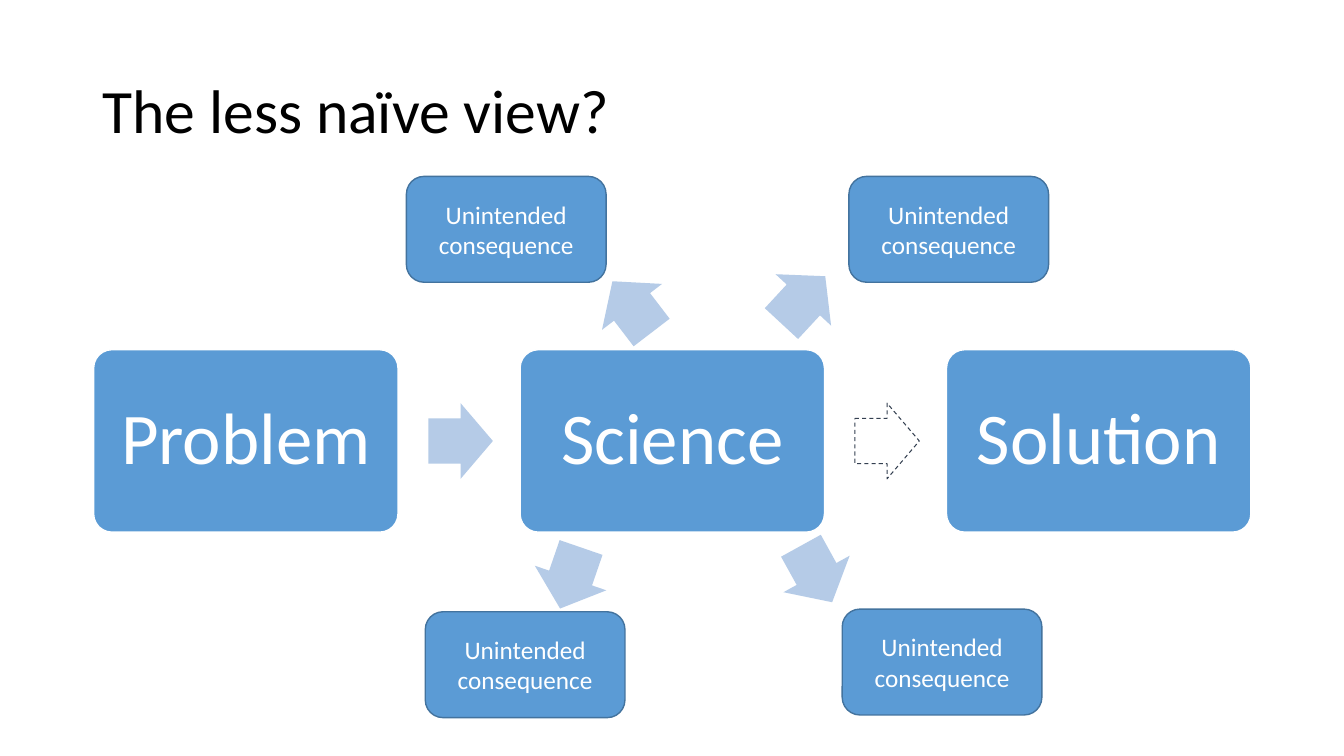
"""Build a slide on science and its unintended consequences."""
import pptx
import pptx.util
import pptx.dml.color
import pptx.enum.dml
import pptx.enum.shapes
import pptx.enum.text

Pt = pptx.util.Pt
RGB = pptx.dml.color.RGBColor.from_string
SHAPE = pptx.enum.shapes.MSO_SHAPE
ALIGN = pptx.enum.text.PP_ALIGN
COLORS = {"box": "5B9BD5", "edge": "43739E", "arrow": "B5CBE7",
          "dash": "333F50", "white": "FFFFFF", "black": "000000"}


def add_shape(s, kind, box, fill, line=None, width=1):
    sp = s.shapes.add_shape(kind, *[Pt(v) for v in box])
    sp.shadow.inherit = False
    sp.fill.solid()
    sp.fill.fore_color.rgb = RGB(COLORS[fill])
    if line:
        sp.line.color.rgb = RGB(COLORS[line])
        sp.line.width = Pt(width)
    else:
        sp.line.fill.background()
    return sp


def set_text(sp, text, size, color, inset, para):
    tf = sp.text_frame
    tf.text = text
    frame = {"word_wrap": True, "auto_size": pptx.enum.text.MSO_AUTO_SIZE.NONE,
             "vertical_anchor": pptx.enum.text.MSO_ANCHOR.MIDDLE,
             "margin_left": Pt(inset), "margin_right": Pt(inset),
             "margin_top": Pt(3.6), "margin_bottom": Pt(3.6)}
    for name, value in frame.items():
        setattr(tf, name, value)
    p = tf.paragraphs[0]
    for name, value in para.items():
        setattr(p, name, value)
    font = p.runs[0].font
    for name, value in {"name": "Calibri", "size": Pt(size), "bold": False}.items():
        setattr(font, name, value)
    font.color.rgb = RGB(COLORS[color])


prs = pptx.Presentation()
prs.slide_width, prs.slide_height = Pt(960), Pt(540)
s = prs.slides.add_slide(prs.slide_layouts[5])

title = s.shapes.title
for name, value in {"left": 66, "top": 28.8, "width": 828, "height": 104.4}.items():
    setattr(title, name, Pt(value))
set_text(title, "The less naïve view?", 44, "black", 7.2,
         {"alignment": ALIGN.LEFT, "line_spacing": 0.9})

step_left, step_gap = 66.9, 304.6
for i, step in enumerate(["Problem", "Science", "Solution"]):
    sp = add_shape(s, SHAPE.ROUNDED_RECTANGLE,
                   (step_left + i * step_gap, 249.8, 217.4, 130.3), "box", "white")
    sp.adjustments[0] = 0.1
    set_text(sp, step, 52, "white", 4, {"alignment": ALIGN.CENTER, "line_spacing": 0.9})

arrows = [(306, 288, 0, False), (610.6, 288, 0, True),
          (550.8, 187.2, 312.8, False), (428.4, 192.2, 232.6, False),
          (560.2, 383, 61.1, False), (384.5, 385.9, 109, False)]
for left, top, angle, dashed in arrows:
    box = (left, top, 46.1, 54)
    if dashed:
        sp = add_shape(s, SHAPE.RIGHT_ARROW, box, "white", "dash", 0.75)
        sp.line.dash_style = pptx.enum.dml.MSO_LINE.DASH
    else:
        sp = add_shape(s, SHAPE.RIGHT_ARROW, box, "arrow")
    sp.adjustments[0], sp.adjustments[1] = 0.6, 0.5
    sp.rotation = angle

for left, top in [(606.4, 126), (290.3, 126), (601.6, 435.1), (303.8, 437)]:
    sp = add_shape(s, SHAPE.ROUNDED_RECTANGLE, (left, top, 142.6, 75.6), "box", "edge")
    set_text(sp, "Unintended consequence", 18, "white", 7.2, {"alignment": ALIGN.CENTER})

prs.save("out.pptx")
